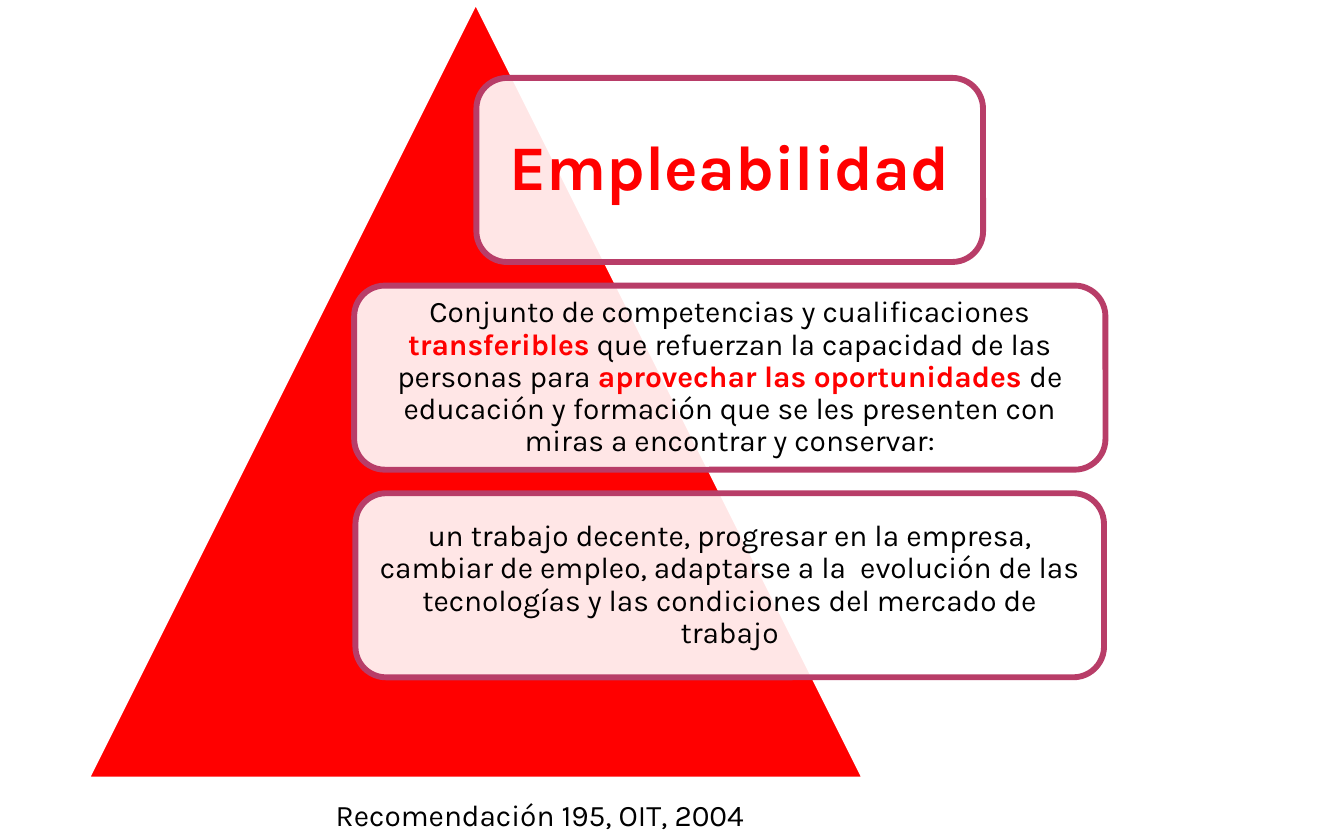
from dataclasses import dataclass

from lxml import etree
from pptx import Presentation
from pptx.dml.color import RGBColor
from pptx.enum.shapes import MSO_SHAPE as Shape
from pptx.enum.text import MSO_ANCHOR as Anchor, PP_ALIGN as Align
from pptx.oxml.ns import qn
from pptx.util import Inches, Pt

COLORS = {"red": "FF0000", "plum": "B83D68", "white": "FFFFFF", "black": "000000"}
FONT = "Karla"
BODY_SIZE = 16
BORDER = 3.15
CARD_CENTER, CARD_TOP, CARD_HEIGHT, CARD_PITCH = 5.43, 0.58, 1.37, 1.545


@dataclass
class Phrase:
    text: str
    strong: bool = False


@dataclass
class Card:
    width: float
    phrases: list[Phrase]
    size: int = BODY_SIZE
    inset: float = 0.07


def rgb(name: str) -> RGBColor:
    return RGBColor.from_string(COLORS[name])


def add_phrases(paragraph, phrases: list[Phrase], size: int) -> None:
    for phrase in phrases:
        run = paragraph.add_run()
        run.text = phrase.text
        run.font.name = FONT
        run.font.size = Pt(size)
        run.font.bold = phrase.strong
        run.font.color.rgb = rgb("red" if phrase.strong else "black")


def add_block(slide, kind, left: float, top: float, width: float, height: float,
              fill: str, line: str):
    block = slide.shapes.add_shape(kind, Inches(left), Inches(top),
                                   Inches(width), Inches(height))
    block.shadow.inherit = False
    block.fill.solid()
    block.fill.fore_color.rgb = rgb(fill)
    block.line.color.rgb = rgb(line)
    block.line.width = Pt(BORDER)
    return block


def add_card(slide, card: Card, top: float) -> None:
    block = add_block(slide, Shape.ROUNDED_RECTANGLE, CARD_CENTER - card.width / 2, top,
                      card.width, CARD_HEIGHT, "white", "plum")
    # Let the pyramid show faintly through the card
    fill_color = block.fill._xPr.find(qn("a:solidFill"))[0]
    etree.SubElement(fill_color, qn("a:alpha"), val="90000")

    frame = block.text_frame
    frame.word_wrap = True
    frame.vertical_anchor = Anchor.MIDDLE
    frame.margin_left = frame.margin_right = Inches(card.inset)
    frame.margin_top = frame.margin_bottom = Inches(card.inset)
    paragraph = frame.paragraphs[0]
    paragraph.alignment = Align.CENTER
    paragraph.line_spacing = 0.9
    add_phrases(paragraph, card.phrases, card.size)


CARDS = [
    Card(3.77, [Phrase("Empleabilidad", True)], size=34, inset=0.14),
    Card(5.59, [
        Phrase("Conjunto de competencias y cualificaciones "),
        Phrase("transferibles", True),
        Phrase(" que refuerzan la capacidad de las personas para "),
        Phrase("aprovechar las oportunidades ", True),
        Phrase("de educación y formación que se les presenten con miras a "
               "encontrar y conservar:"),
    ]),
    Card(5.57, [
        Phrase("un trabajo decente, progresar en la empresa, cambiar de empleo, "
               "adaptarse a la  evolución de las tecnologías y las condiciones "
               "del mercado de trabajo"),
    ]),
]


def main() -> None:
    prs = Presentation()
    prs.slide_width, prs.slide_height = Inches(10), Inches(6.25)
    slide = prs.slides.add_slide(prs.slide_layouts[6])

    # Pyramid behind the cards
    add_block(slide, Shape.ISOSCELES_TRIANGLE, 0.64, 0, 5.8, 5.8, "red", "white")

    # Definition cards
    for row, card in enumerate(CARDS):
        add_card(slide, card, CARD_TOP + row * CARD_PITCH)

    # Citation
    citation = slide.shapes.add_textbox(Inches(2.4), Inches(5.88), Inches(3.86), Inches(0.37))
    citation.text_frame.word_wrap = True
    add_phrases(citation.text_frame.paragraphs[0],
                [Phrase("Recomendación 195, OIT, 2004")], BODY_SIZE)

    prs.save("out.pptx")


if __name__ == "__main__":
    main()
